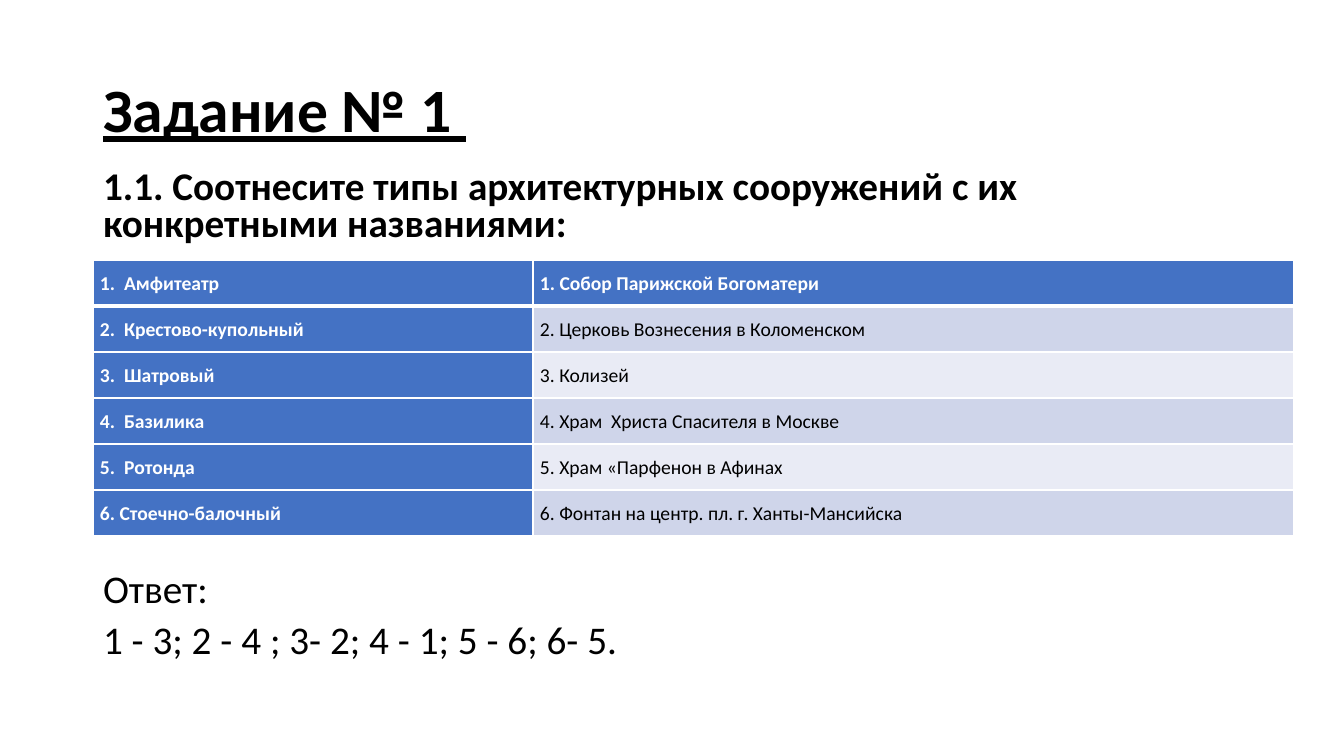
"""Build a task slide that matches building types with named landmarks."""
from lxml import etree
from pptx import Presentation
from pptx.dml.color import RGBColor
from pptx.enum.text import MSO_ANCHOR, MSO_AUTO_SIZE, PP_ALIGN
from pptx.oxml.ns import qn
from pptx.util import Pt

PX = 914400 / 100.8
LEFT, JUSTIFY = PP_ALIGN.LEFT, PP_ALIGN.JUSTIFY
MIDDLE, TOP = MSO_ANCHOR.MIDDLE, MSO_ANCHOR.TOP
NO_AUTOFIT = MSO_AUTO_SIZE.NONE
BLACK, WHITE, BLUE = "000000", "FFFFFF", "4472C4"
BANDS = ["E9EBF5", "CFD5EA"]


def px(*lengths):
    return [round(length * PX) for length in lengths]


def style(paragraph, size, color, bold, spacing, align=LEFT):
    paragraph.alignment = align
    paragraph.line_spacing = spacing
    for run in paragraph.runs:
        run.font.name = "Calibri"
        run.font.size = Pt(size)
        run.font.bold = bold
        run.font.color.rgb = RGBColor.from_string(color)


prs = Presentation()
prs.slide_width, prs.slide_height = px(1344, 756)
slide = prs.slides.add_slide(prs.slide_layouts[1])

title, task = slide.placeholders
title.left, title.top, title.width, title.height = px(93, 40, 1159, 146)
title.text_frame.text = "Задание № 1 "
title.text_frame.vertical_anchor = MIDDLE
title.text_frame.auto_size = NO_AUTOFIT
heading = title.text_frame.paragraphs[0]
style(heading, 44, BLACK, True, 0.9)
heading.runs[0].font.underline = True

task.left, task.top, task.width, task.height = px(93, 165, 1159, 516)
task.text_frame.vertical_anchor = TOP
task.text_frame.auto_size = NO_AUTOFIT
task_lines = [
    ("1.1. Соотнесите типы архитектурных сооружений с их конкретными названиями:", True, 10),
    ("Ответ:", False, 234),
    ("1 - 3; 2 - 4 ; 3- 2; 4 - 1; 5 - 6; 6- 5.", False, 10),
]
task.text_frame.text = "\n".join(line for line, _, _ in task_lines)
for paragraph, (_, bold, gap) in zip(task.text_frame.paragraphs, task_lines):
    style(paragraph, 28, BLACK, bold, 0.8)
    paragraph.space_before = Pt(gap)
    properties = paragraph._p.get_or_add_pPr()
    properties.set("marL", "0")
    properties.set("indent", "0")
    etree.SubElement(properties, qn("a:buNone"))

pairs = [
    ("1.  Амфитеатр", "1. Собор Парижской Богоматери"),
    ("2.  Крестово-купольный", "2. Церковь Вознесения в Коломенском"),
    ("3.  Шатровый", "3. Колизей"),
    ("4.  Базилика", "4. Храм  Христа Спасителя в Москве"),
    ("5.  Ротонда", "5. Храм «Парфенон в Афинах "),
    ("6. Стоечно-балочный", "6. Фонтан на центр. пл. г. Ханты-Мансийска"),
]
matches = slide.shapes.add_table(len(pairs), 2, *px(93, 260, 1201, 276)).table
for column, width in zip(matches.columns, px(440, 761)):
    column.width = width

for row, pair in enumerate(pairs):
    for col, label in enumerate(pair):
        cell = matches.cell(row, col)
        cell.text = label
        cell.margin_left, cell.margin_right, cell.margin_top, cell.margin_bottom = px(7, 7, 0, 0)
        accent = row == 0 or col == 0
        align = JUSTIFY if col == 1 and row >= 4 else LEFT
        style(cell.text_frame.paragraphs[0], 14, WHITE if accent else BLACK, accent, 1.5, align)
        for side in "LRTB":
            under_header = (row, side) in [(0, "B"), (1, "T")]
            border = etree.SubElement(cell._tc.get_or_add_tcPr(), qn(f"a:ln{side}"))
            border.set("w", str(Pt(3 if under_header else 1)))
            line_fill = etree.SubElement(border, qn("a:solidFill"))
            etree.SubElement(line_fill, qn("a:srgbClr")).set("val", WHITE)
        cell.fill.solid()
        cell.fill.fore_color.rgb = RGBColor.from_string(BLUE if accent else BANDS[row % 2])

prs.save("out.pptx")
